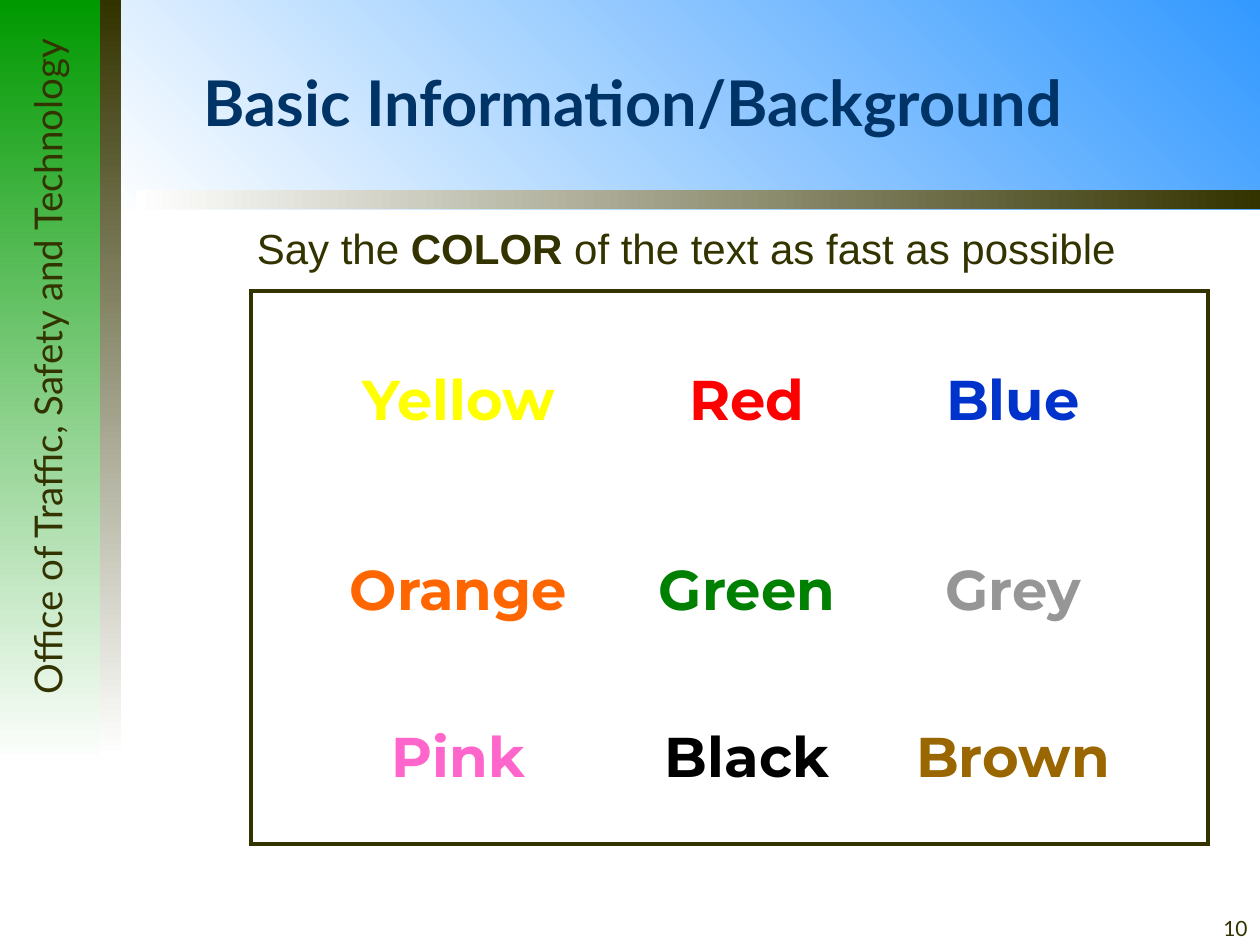
from itertools import product

from lxml.etree import SubElement
from pptx import Presentation
from pptx.dml.color import RGBColor
from pptx.enum.shapes import MSO_SHAPE as Shape
from pptx.enum.text import MSO_ANCHOR as Anchor, PP_ALIGN as Align
from pptx.oxml.ns import qn
from pptx.util import Inches, Pt

# Content
TITLE = "Basic Information/Background"
OFFICE = "Office of Traffic, Safety and Technology"
PAGE_NUMBER = "10"
INSTRUCTION = [("Say the ", False), ("COLOR", True),
               (" of the text as fast as possible", False)]
COLOR_WORDS = [
    ("Yellow", "FFFF00"), ("Red", "FF0000"), ("Blue", "0033CC"),
    ("Orange", "FF6600"), ("Green", "008000"), ("Grey", "969696"),
    ("Pink", "FF66CC"), ("Black", "000000"), ("Brown", "996600"),
]

THEME = {
    "white": "FFFFFF", "dark": "333300", "navy": "003366",
    "sky": "3399FF", "green": "009900",
    "heading_font": "Lato", "body_font": "Arial", "word_font": "Montserrat",
    "title_size": 36, "word_size": 32, "body_size": 24,
    "office_size": 22, "page_size": 12,
}

# Layout: left, top, width, height
BANDS = [  # place, first colour, last colour, counter-clockwise angle
    ((0.84, 0, 9.16, 1.66), "white", "sky", 45),
    ((0, 0, 0.84, 6.08), "green", "white", 270),
    ((0.79, 0, 0.17, 6.01), "dark", "white", 270),
    ((1.08, 1.51, 8.92, 0.15), "white", "dark", 0),
]
FRAME = (1.99, 2.31, 7.6, 4.39)
COLUMN_LEFTS = (2.46, 4.75, 6.86)
ROW_TOPS = (2.84, 4.35, 5.68)
WORD_SIZE = (2.36, 0.63)


def color(value):
    return RGBColor.from_string(THEME.get(value, value))


def add_rectangle(page, place):
    box = page.shapes.add_shape(Shape.RECTANGLE, *map(Inches, place))
    box.shadow.inherit = False
    box.line.fill.background()
    return box


def add_panel(page, place):
    box = add_rectangle(page, place)
    box.fill.solid()
    box.fill.fore_color.rgb = color("white")
    return box


def add_band(page, place, first, last, angle):
    fill = add_rectangle(page, place).fill
    fill.gradient()
    fill.gradient_angle = angle
    for stop, position, name in zip(fill.gradient_stops, (0, 1), (first, last)):
        stop.position = position
        stop.color.rgb = color(name)


def add_label(page, place):
    return page.shapes.add_textbox(*map(Inches, place))


def write(box, spans, font, size, tint, bold=None,
          align=Align.LEFT, anchor=Anchor.TOP):
    box.text_frame.word_wrap = True
    box.text_frame.vertical_anchor = anchor
    para = box.text_frame.paragraphs[0]
    para.alignment = align
    para.font.name = THEME[font]
    para.font.size = Pt(THEME[size])
    para.font.color.rgb = color(tint)
    para.font.bold = bold
    for text, strong in spans:
        span = para.add_run()
        span.text = text
        if strong:
            span.font.bold = True


def main():
    deck = Presentation()
    deck.slide_width, deck.slide_height = Inches(10), Inches(7.5)
    page = deck.slides.add_slide(deck.slide_layouts[6])

    # Gradient bands and sidebar name
    for place, first, last, angle in BANDS:
        add_band(page, place, first, last, angle)
    office = add_label(page, (-2.64, 2.99, 6.03, 0.47))
    office.rotation = 270
    write(office, [(OFFICE, False)], "heading_font", "office_size", "dark",
          align=Align.RIGHT)

    # Page number and title
    write(add_label(page, (8.82, 7.23, 1.18, 0.27)), [(PAGE_NUMBER, False)],
          "heading_font", "page_size", "dark",
          align=Align.RIGHT, anchor=Anchor.MIDDLE)
    write(add_label(page, (1.52, 0.18, 8.48, 1.25)), [(TITLE, False)],
          "heading_font", "title_size", "navy", bold=True,
          anchor=Anchor.MIDDLE)

    # Frame with square corners
    frame = add_panel(page, FRAME)
    frame.line.color.rgb = color("dark")
    frame.line.width = Pt(2.25)
    outline = frame.element.spPr.find(qn("a:ln"))
    SubElement(outline, qn("a:miter"), lim="800000")

    # Grid of colour words
    for (top, left), (word, tint) in zip(product(ROW_TOPS, COLUMN_LEFTS),
                                         COLOR_WORDS):
        write(add_panel(page, (left, top, *WORD_SIZE)), [(word, False)],
              "word_font", "word_size", tint, bold=True, align=Align.CENTER)

    # Instruction above the frame
    write(add_panel(page, (1.94, 1.72, 7.64, 0.5)), INSTRUCTION,
          "body_font", "body_size", "dark")

    deck.save("out.pptx")


if __name__ == "__main__":
    main()
